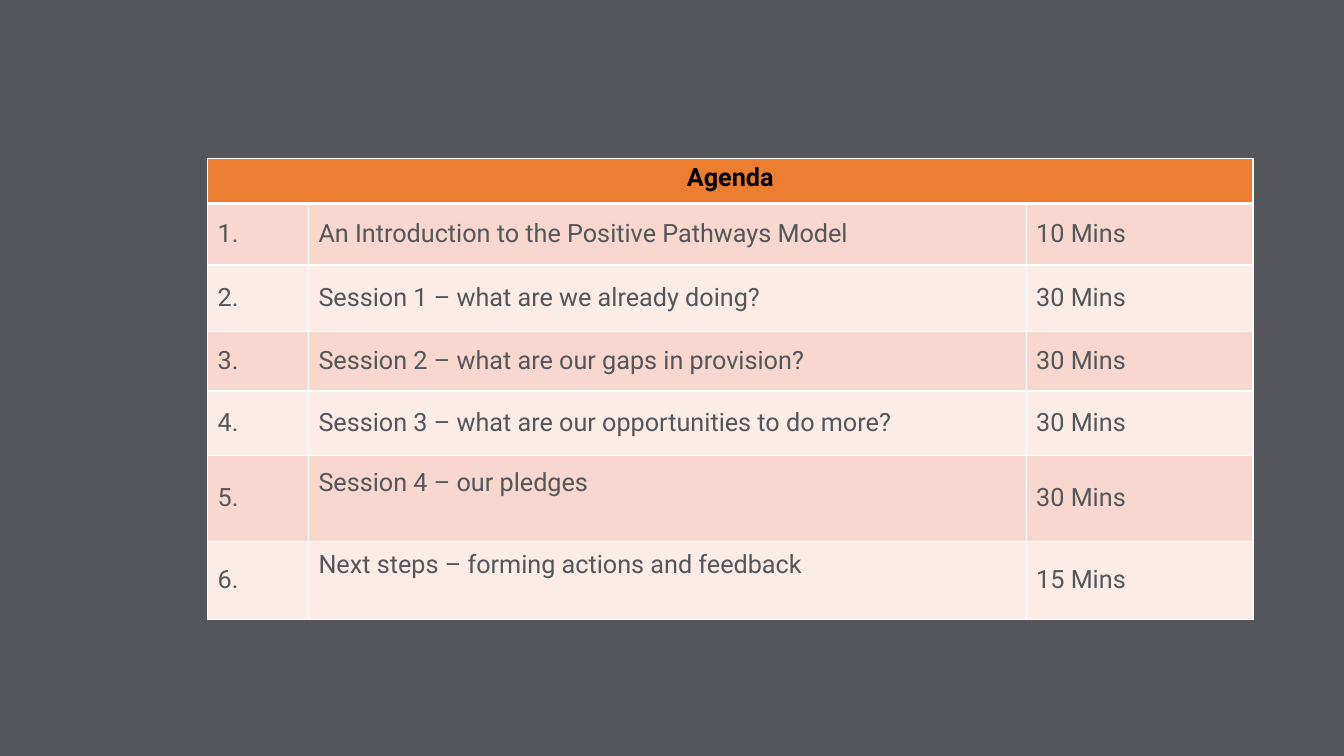
from lxml import etree
from pptx import Presentation
from pptx.dml.color import RGBColor
from pptx.enum.text import MSO_ANCHOR, PP_ALIGN
from pptx.oxml.ns import qn
from pptx.util import Inches, Pt

CENTER, LEFT = PP_ALIGN.CENTER, PP_ALIGN.LEFT
TOP, MIDDLE = MSO_ANCHOR.TOP, MSO_ANCHOR.MIDDLE
WIDTH, HEIGHT = Inches(13.33), Inches(7.5)

COLORS = {
    "slate": "54565B",
    "orange": "ED7D31",
    "peach": "F8D7CE",
    "blush": "FCECE8",
    "white": "FFFFFF",
    "black": "000000",
}
HEADER = {"fill": "orange", "color": "black", "bold": True, "align": CENTER, "anchor": TOP}
BODY = {"color": "slate", "bold": False, "align": LEFT, "anchor": MIDDLE}
BANDS = ("peach", "blush")

AGENDA = [
    ("An Introduction to the Positive Pathways Model", 10),
    ("Session 1 – what are we already doing?", 30),
    ("Session 2 – what are our gaps in provision?", 30),
    ("Session 3 – what are our opportunities to do more?", 30),
    ("Session 4 – our pledges", 30),
    ("Next steps – forming actions and feedback", 15),
]
RAISED_FROM = 5
COL_SHARES = (7.5, 53.4, 16.88)
ROW_SHARES = (6, 8.13, 8.8, 7.87, 8.53, 11.33, 10.4)


class Deck:
    font = {"name": "Roboto", "size": Pt(18)}

    def __init__(self, background):
        self.prs = Presentation()
        self.prs.slide_width, self.prs.slide_height = WIDTH, HEIGHT
        self.s = self.prs.slides.add_slide(self.prs.slide_layouts[6])
        fill = self.s.background.fill
        fill.solid()
        fill.fore_color.rgb = self.rgb(background)

    def rgb(self, name):
        return RGBColor.from_string(COLORS[name])

    def x(self, share):
        return int(WIDTH * share / 100)

    def y(self, share):
        return int(HEIGHT * share / 100)

    def table(self, left, top, cols, rows):
        sp = self.s.shapes.add_table(
            len(rows), len(cols), self.x(left), self.y(top),
            self.x(sum(cols)), self.y(sum(rows)))
        table = sp.table
        for col, share in zip(table.columns, cols):
            col.width = self.x(share)
        for row, share in zip(table.rows, rows):
            row.height = self.y(share)
        return table

    def borders(self, cell, **widths):
        tcPr = cell._tc.get_or_add_tcPr()
        for side in "LRTB":
            ln = etree.SubElement(tcPr, qn(f"a:ln{side}"), w=str(Pt(widths.get(side, 1))))
            fill = etree.SubElement(ln, qn("a:solidFill"))
            etree.SubElement(fill, qn("a:srgbClr"), val=COLORS["white"])

    def cell(self, cell, text, fmt):
        cell.fill.solid()
        cell.fill.fore_color.rgb = self.rgb(fmt["fill"])
        cell.vertical_anchor = fmt["anchor"]
        cell.margin_bottom = Inches(fmt.get("bottom", 0.05))
        p = cell.text_frame.paragraphs[0]
        p.alignment = fmt["align"]
        r = p.add_run()
        r.text = text
        for name, value in {**self.font, "bold": fmt["bold"]}.items():
            setattr(r.font, name, value)
        r.font.color.rgb = self.rgb(fmt["color"])


def main():
    deck = Deck("slate")
    table = deck.table(15.45, 20.93, COL_SHARES, ROW_SHARES)
    for i in range(len(ROW_SHARES)):
        widths = {0: {"B": 3}, 1: {"T": 3}}.get(i, {})
        for j in range(len(COL_SHARES)):
            deck.borders(table.cell(i, j), **widths)

    title = table.cell(0, 0)
    title.merge(table.cell(0, len(COL_SHARES) - 1))
    deck.cell(title, "Agenda", HEADER)

    for i, (topic, minutes) in enumerate(AGENDA, 1):
        fmt = {**BODY, "fill": BANDS[(i - 1) % 2]}
        raised = {**fmt, "bottom": 0.35} if i >= RAISED_FROM else fmt
        deck.cell(table.cell(i, 0), f"{i}.", fmt)
        deck.cell(table.cell(i, 1), topic, raised)
        deck.cell(table.cell(i, 2), f"{minutes} Mins", fmt)

    deck.prs.save("out.pptx")


if __name__ == "__main__":
    main()
